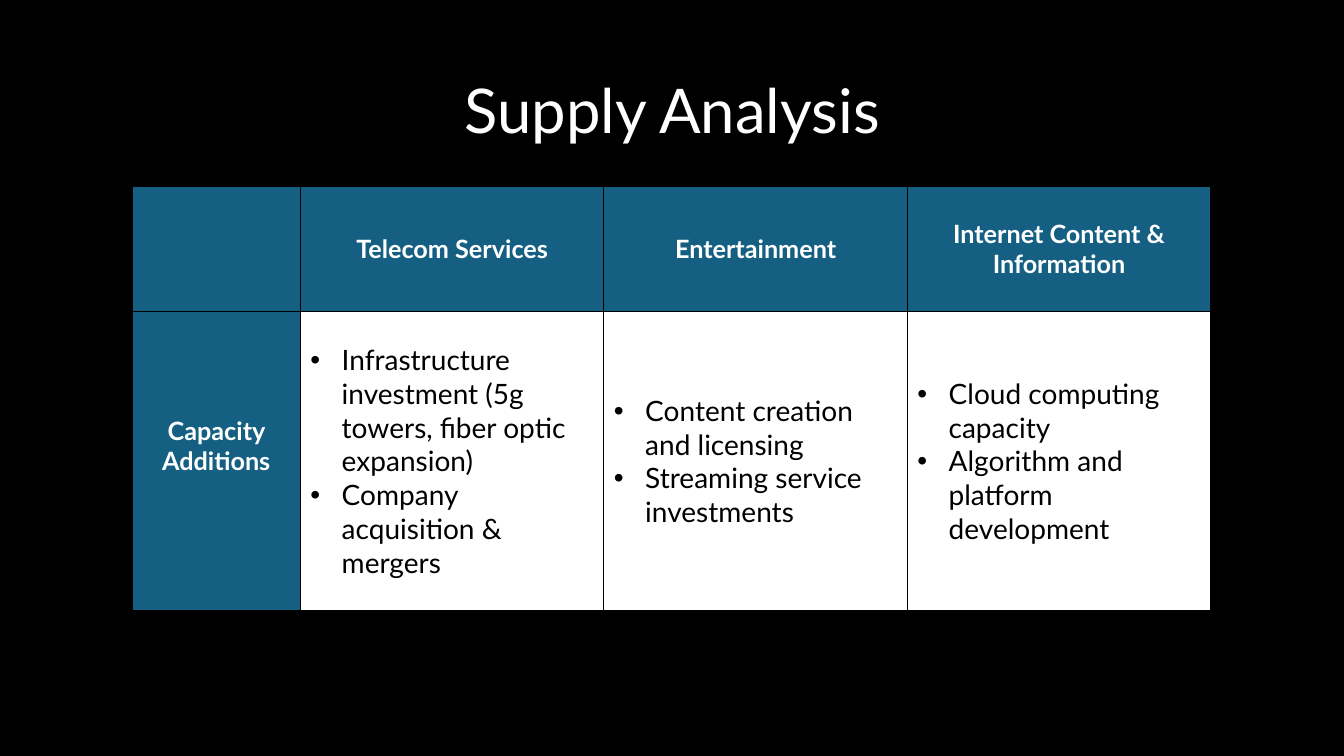
from lxml.etree import SubElement
from pptx import Presentation
from pptx.dml.color import RGBColor
from pptx.enum.text import MSO_ANCHOR as Anchor, PP_ALIGN as Align
from pptx.oxml.ns import qn
from pptx.util import Inches, Pt

COLORS = {"black": "000000", "white": "FFFFFF", "teal": "156082"}
FONT = "Lato"
BULLET_INDENT = Inches(0.31)


def add_run(paragraph, wording, size, color, bold=False):
    run = paragraph.add_run()
    run.text = wording
    run.font.name = FONT
    run.font.size = Pt(size)
    run.font.bold = bold
    run.font.color.rgb = RGBColor.from_string(COLORS[color])


def style_cell(cell, color):
    properties = cell._tc.get_or_add_tcPr()
    for side in ("lnL", "lnR", "lnT", "lnB"):
        border = SubElement(properties, qn(f"a:{side}"), w=str(Pt(1)))
        border_fill = SubElement(border, qn("a:solidFill"))
        SubElement(border_fill, qn("a:srgbClr"), val=COLORS["black"])
    cell.fill.solid()
    cell.fill.fore_color.rgb = RGBColor.from_string(COLORS[color])
    cell.vertical_anchor = Anchor.MIDDLE


presentation = Presentation()
presentation.slide_width = Inches(13.33)
presentation.slide_height = Inches(7.5)
slide = presentation.slides.add_slide(presentation.slide_layouts[6])
slide.background.fill.solid()
slide.background.fill.fore_color.rgb = RGBColor.from_string(COLORS["black"])

heading = slide.shapes.add_textbox(Inches(0.92), Inches(0.4), Inches(11.5), Inches(1.45)).text_frame
heading.word_wrap = True
heading.vertical_anchor = Anchor.MIDDLE
heading.paragraphs[0].alignment = Align.CENTER
heading.paragraphs[0].line_spacing = 0.9
add_run(heading.paragraphs[0], "Supply Analysis", 44, "white")

row_label = "Capacity Additions"
sectors = {
    "Telecom Services": [
        "Infrastructure investment (5g towers, fiber optic expansion)",
        "Company acquisition & mergers",
    ],
    "Entertainment": [
        "Content creation and licensing",
        "Streaming service investments",
    ],
    "Internet Content & Information": [
        "Cloud computing capacity",
        "Algorithm and platform development",
    ],
}
column_widths = [1.67] + [3.01] * len(sectors)
row_heights = [1.24, 2.97]

supply = slide.shapes.add_table(
    len(row_heights), len(column_widths), Inches(1.31), Inches(1.85),
    Inches(sum(column_widths)), Inches(sum(row_heights)),
).table
for column, width in zip(supply.columns, column_widths):
    column.width = Inches(width)
for row, height in zip(supply.rows, row_heights):
    row.height = Inches(height)

labels = [(0, column, sector) for column, sector in enumerate(sectors, 1)]
for row, column, label in [(0, 0, ""), *labels, (1, 0, row_label)]:
    cell = supply.cell(row, column)
    style_cell(cell, "teal")
    if label:
        paragraph = cell.text_frame.paragraphs[0]
        paragraph.alignment = Align.CENTER
        add_run(paragraph, label, 18, "white", bold=True)
supply.cell(1, 0).margin_bottom = Inches(0.35)

for column, additions in enumerate(sectors.values(), 1):
    cell = supply.cell(1, column)
    style_cell(cell, "white")
    for index, addition in enumerate(additions):
        frame = cell.text_frame
        paragraph = frame.add_paragraph() if index else frame.paragraphs[0]
        bullet = paragraph._p.get_or_add_pPr()
        bullet.set("marL", str(BULLET_INDENT))
        bullet.set("indent", str(-BULLET_INDENT))
        SubElement(bullet, qn("a:buFont"), typeface="Arial")
        SubElement(bullet, qn("a:buChar"), char="•")
        add_run(paragraph, addition, 20, "black")

presentation.save("out.pptx")
